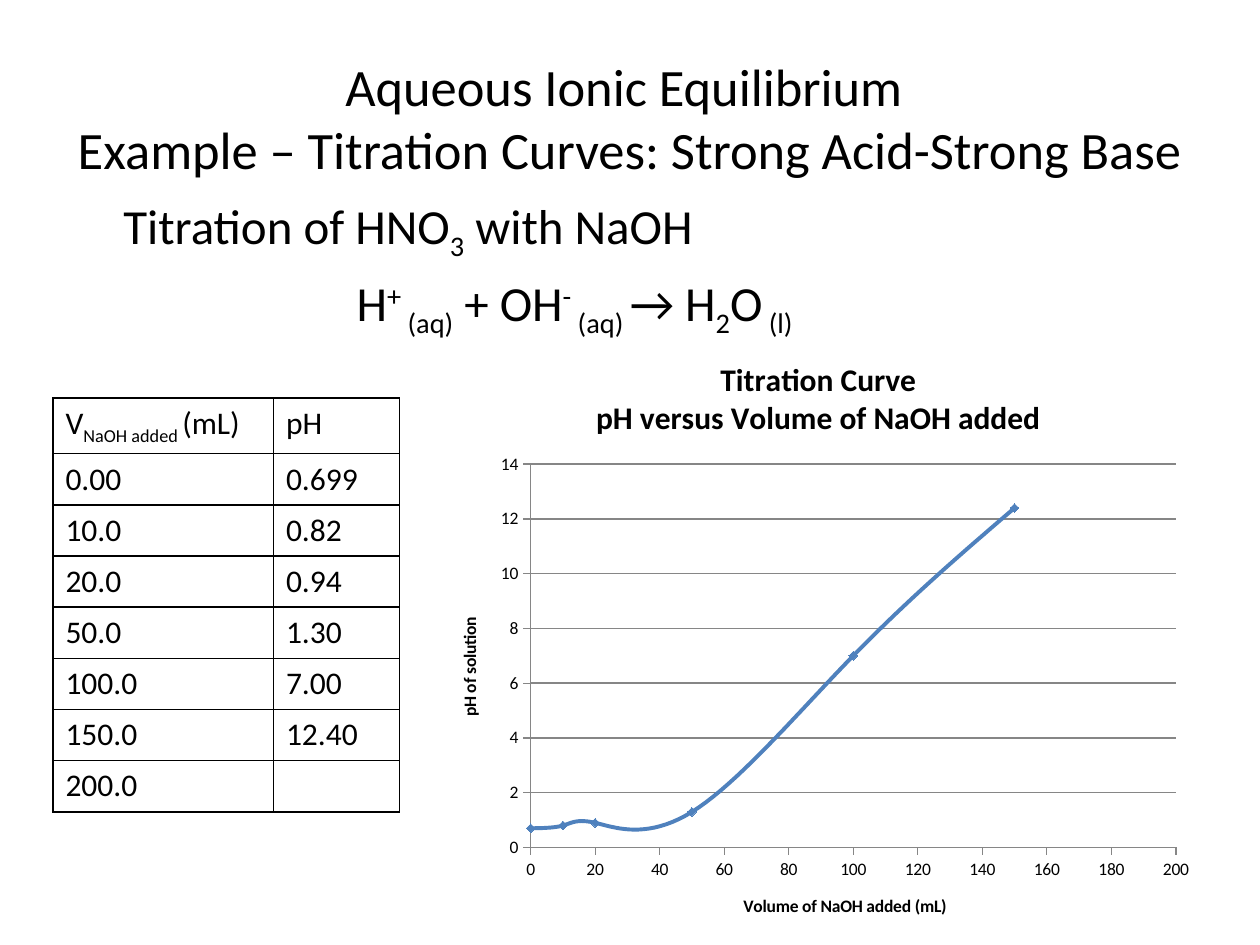
from lxml import etree
from pptx import Presentation
from pptx import util as u
from pptx.chart.data import XyChartData
from pptx.dml.color import RGBColor
from pptx.enum import chart as ch, text
from pptx.oxml import parse_xml
from pptx.oxml.ns import nsdecls, qn

SCALE = 9144
SUB, SUP = -25000, 30000
CENTER = text.PP_ALIGN.CENTER
READINGS = [("0.00", "0.699"), ("10.0", "0.82"), ("20.0", "0.94"), ("50.0", "1.30"),
            ("100.0", "7.00"), ("150.0", "12.40"), ("200.0", "")]


def px(n):
    return u.Emu(n * SCALE)


def color(value):
    return RGBColor.from_string(value)


class Deck:
    font, ink, grid, accent = "Calibri", "000000", "868686", "4F81BD"

    def __init__(self, w, h):
        self.prs = Presentation()
        self.prs.slide_width, self.prs.slide_height = px(w), px(h)
        self.s = self.prs.slides.add_slide(self.prs.slide_layouts[6])

    def style(self, font, size, bold=False):
        font.name, font.size, font.bold = self.font, u.Pt(size), bold
        font.color.rgb = color(self.ink)

    def rich(self, p, parts, size):
        for part in parts:
            words, base = part if isinstance(part, tuple) else (part, 0)
            r = p.add_run()
            r.text = words
            self.style(r.font, size)
            if base:
                r.font._element.set("baseline", str(base))

    def text(self, x, y, w, h, lines, size, align=None, anchor=text.MSO_ANCHOR.TOP):
        tf = self.s.shapes.add_textbox(px(x), px(y), px(w), px(h)).text_frame
        tf.word_wrap, tf.vertical_anchor = True, anchor
        for i, parts in enumerate(lines):
            p = tf.add_paragraph() if i else tf.paragraphs[0]
            p.alignment = align
            self.rich(p, parts, size)

    def border(self, cell):
        tcPr = cell._tc.get_or_add_tcPr()
        for i, side in enumerate(("lnL", "lnR", "lnT", "lnB")):
            tcPr.insert(i, parse_xml(
                f'<a:{side} {nsdecls("a")} w="12700"><a:solidFill>'
                f'<a:srgbClr val="{self.ink}"/></a:solidFill></a:{side}>'))

    def table(self, x, y, widths, h, rows, size):
        tb = self.s.shapes.add_table(len(rows), len(widths), px(x), px(y),
                                     px(sum(widths)), px(h)).table
        tb.first_row = tb.horz_banding = False
        for col, w in zip(tb.columns, widths):
            col.width = px(w)
        for i, row in enumerate(rows):
            for j, parts in enumerate(row):
                cell = tb.cell(i, j)
                cell.fill.background()
                self.border(cell)
                p = cell.text_frame.paragraphs[0]
                p.font.size = u.Pt(size)
                self.rich(p, parts, size)

    def title(self, owner, lines, size):
        tf = owner.text_frame
        tf.text = "\n".join(lines)
        for p in tf.paragraphs:
            self.style(p.font, size, True)
            for r in p.runs:
                self.style(r.font, size, True)

    def axis(self, axis, name, top, step, gridlines):
        axis.minimum_scale, axis.maximum_scale, axis.major_unit = 0, top, step
        axis.major_tick_mark = ch.XL_TICK_MARK.OUTSIDE
        axis.has_major_gridlines = gridlines
        axis.tick_labels.number_format = "General"
        axis.tick_labels.number_format_is_linked = False
        lines = [axis.format.line]
        if gridlines:
            lines.append(axis.major_gridlines.format.line)
        for line in lines:
            line.color.rgb, line.width = color(self.grid), u.Pt(0.75)
        self.title(axis.axis_title, [name], 10)

    def plot_area(self, chart, **box):
        area = chart._chartSpace.chart.plotArea
        for old in area.findall(qn("c:layout")):
            area.remove(old)
        layout = etree.Element(qn("c:layout"))
        manual = etree.SubElement(layout, qn("c:manualLayout"))
        values = dict(layoutTarget="inner", xMode="edge", yMode="edge", **box)
        for tag, value in values.items():
            etree.SubElement(manual, qn(f"c:{tag}")).set("val", str(value))
        area.insert(0, layout)

    def curve(self, x, y, w, h, heading, points):
        data = XyChartData()
        series = data.add_series("Series 1")
        for point in points:
            series.add_data_point(*point)
        chart = self.s.shapes.add_chart(ch.XL_CHART_TYPE.XY_SCATTER_SMOOTH,
                                        px(x), px(y), px(w), px(h), data).chart
        self.style(chart.font, 10)
        chart.has_legend, chart.has_title = False, True
        self.title(chart.chart_title, heading, 18)
        self.axis(chart.category_axis, "Volume of NaOH added (mL)", 200, 20, False)
        self.axis(chart.value_axis, "pH of solution", 14, 2, True)
        self.plot_area(chart, x=0.13, y=0.21, w=0.83, h=0.63)
        chart.plots[0].vary_by_categories = False
        line = chart.plots[0].series[0]
        line._element.find(qn("c:smooth")).set("val", "1")
        line.format.line.color.rgb, line.format.line.width = color(self.accent), u.Pt(2.25)
        marker = line.marker
        marker.style, marker.size = ch.XL_MARKER_STYLE.DIAMOND, 5
        marker.format.fill.solid()
        marker.format.fill.fore_color.rgb = color(self.accent)
        marker.format.line.color.rgb = color(self.accent)


def main():
    d = Deck(1000, 750)
    d.text(50, 30, 900, 125,
           [["Aqueous Ionic Equilibrium "],
            ["Example – Titration Curves: Strong Acid-Strong Base"]],
           30, CENTER, text.MSO_ANCHOR.MIDDLE)
    d.text(88, 150, 862, 60, [["Titration of HNO", ("3", SUB), " with NaOH"]], 28)
    d.text(156, 211, 600, 60,
           [["H", ("+", SUP), (" (aq)", SUB), " + OH", ("-", SUP), (" (aq) ", SUB),
             "→ H", ("2", SUB), "O", (" (l)", SUB)]], 28, CENTER)
    header = (["V", ("NaOH added ", SUB), "(mL)"], ["pH"])
    rows = [[[value] if value else [] for value in row] for row in READINGS]
    d.table(42, 316, (175, 100), 325, [header] + rows, 18)
    d.curve(341, 267, 617, 483, ["Titration Curve", "pH versus Volume of NaOH added"],
            [(round(float(v)), round(float(ph), 1)) for v, ph in READINGS if ph])
    d.prs.save("out.pptx")


if __name__ == "__main__":
    main()
